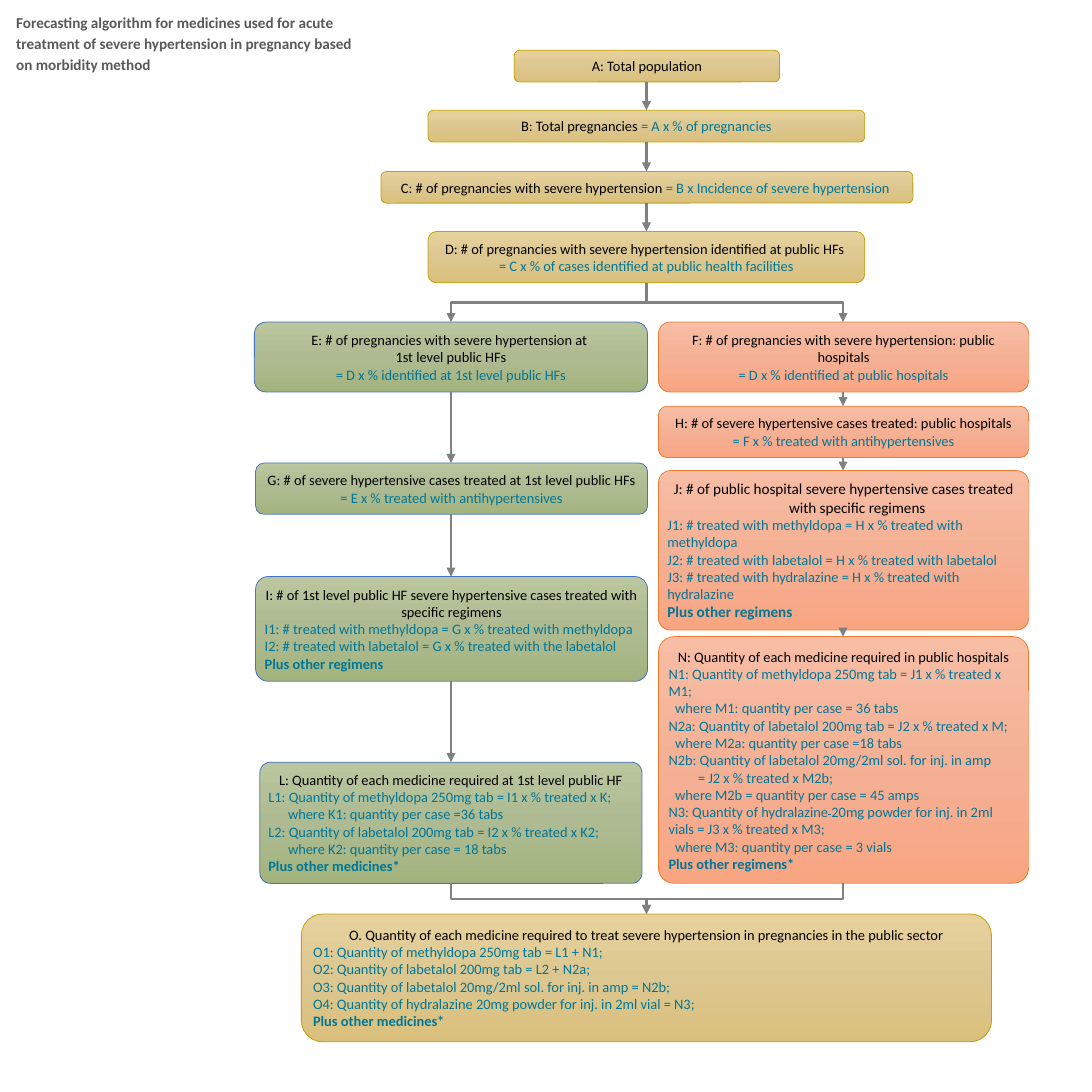
"""Build the forecasting flowchart for severe hypertension medicines."""
import copy

import pptx
import pptx.dml.color
import pptx.enum.shapes
import pptx.enum.text
import pptx.oxml.ns
import pptx.oxml.xmlchemy
import pptx.util
from lxml import etree
from pptx.util import Inches

ALIGN = pptx.enum.text.PP_ALIGN
BLACK, TEAL, GREY, TITLE_GREY = "000000", "007698", "808080", "595959"

BRANCHES = {
    "total": {"stops": ("E7D19D", "DDC790", "DAC07C"), "outline": "C2A204", "axis": 5.92},
    "first_level": {"stops": ("BAC69E", "AEBB92", "A3B37D"), "outline": "4472C4", "axis": 4.13},
    "hospital": {"stops": ("F7BDA5", "F5B196", "F8A582"), "outline": "ED7D31", "axis": 7.72},
}

FLOW = ("AB", "BC", "CD", "DE", "DF", "EG", "GI", "IL",
        "FH", "HJ", "JN", "LO", "NO")


def run(text, color=TEAL, size=9.5, bold=False, strike=False):
    """Describe one run of text."""
    return {"text": text, "color": color, "size": size, "bold": bold, "strike": strike}


def head(text, *more, size=9.5, hang=0):
    """Describe a centred step heading."""
    return {"runs": [run(text, BLACK, size), *more], "align": ALIGN.CENTER,
            "margin": hang, "first": -hang}


def formula(text):
    """Describe a centred formula."""
    return {"runs": [run(text)], "align": ALIGN.CENTER, "margin": 0, "first": 0}


def item(*parts, indent=0.0):
    """Describe a left-aligned quantity line."""
    runs = [run(part) if isinstance(part, str) else part for part in parts]
    return {"runs": runs, "align": ALIGN.LEFT, "margin": indent, "first": 0}


def plus(what, size=9.5):
    """Describe the bold closing line of a step."""
    return item(run(f"Plus other {what}", size=size, bold=True))


STEPS = {
    "A": ("total", (4.71, 0.46, 2.43, 0.29), 0.167, [head("A: Total population")]),
    "B": ("total", (3.92, 1.01, 4, 0.29), 0.167, [
        head("B: Total pregnancies ", run("= A x % of pregnancies"))]),
    "C": ("total", (3.49, 1.57, 4.87, 0.29), 0.167, [
        head("C: # of pregnancies with severe hypertension ",
             run("= B x Incidence of severe hypertension "))]),
    "D": ("total", (3.92, 2.12, 4, 0.47), 0.167, [
        head("D: # of pregnancies with severe hypertension identified at public HFs "),
        formula("= C x % of cases identified at public health facilities")]),
    "E": ("first_level", (2.33, 2.95, 3.6, 0.64), 0.167, [
        head("E: # of pregnancies with severe hypertension at "),
        head("1st level public HFs"),
        formula("= D x % identified at 1st level public HFs")]),
    "F": ("hospital", (6.03, 2.95, 3.39, 0.64), 0.167, [
        head("F: # of pregnancies with severe hypertension: public hospitals"),
        formula("= D x % identified at public hospitals")]),
    "G": ("first_level", (2.34, 4.24, 3.59, 0.47), 0.167, [
        head("G: # of severe hypertensive cases treated at 1st level public HFs"),
        formula("= E x % treated with antihypertensives")]),
    "H": ("hospital", (6.03, 3.72, 3.39, 0.47), 0.167, [
        head("H: # of severe hypertensive cases treated: public hospitals"),
        formula("= F x % treated with antihypertensives")]),
    "I": ("first_level", (2.34, 5.28, 3.59, 0.96), 0.123, [
        head("I: # of 1st level public HF severe hypertensive cases treated with specific regimens"),
        item("I1: # treated with methyldopa = G x % treated with methyldopa"),
        item("I2: # treated with labetalol = G x % treated with the labetalol"),
        plus("regimens")]),
    "J": ("hospital", (6.03, 4.31, 3.39, 1.46), 0.076, [
        head("J: # of public hospital severe hypertensive cases treated with specific regimens",
             size=10, hang=0.25),
        item("J1: # treated with methyldopa = H x % treated with methyldopa"),
        item("J2: # treated with labetalol = H x % treated with labetalol"),
        item("J3: # treated with hydralazine = H x % treated with hydralazine"),
        plus("regimens", size=10)]),
    "L": ("first_level", (2.38, 6.98, 3.5, 1.11), 0.087, [
        head("L: Quantity of each medicine required at 1st level public HF"),
        item("L1: Quantity of methyldopa 250mg tab = I1 x % treated x K;"),
        item("where K1: quantity per case =36 tabs", indent=0.18),
        item("L2: Quantity of labetalol 200mg tab = I2 x % treated x K2;"),
        item("where K2: quantity per case = 18 tabs", indent=0.18),
        plus("medicines*")]),
    "N": ("hospital", (6.03, 5.83, 3.39, 2.26), 0.064, [
        head("N: Quantity of each medicine required in public hospitals"),
        item("N1: Quantity of methyldopa 250mg tab = J1 x % treated x M1;"),
        item("where M1: quantity per case = 36 tabs", indent=0.06),
        item("N2a: Quantity of labetalol 200mg tab = J2 x % treated x M;"),
        item("where M2a: quantity per case =18 tabs", indent=0.06),
        item("N2b: Quantity of labetalol 20mg/2ml sol. for inj. in amp"),
        item("= J2 x % treated x M2b;", indent=0.27),
        item("where M2b = quantity per case = 45 amps", indent=0.06),
        item("N3: Quantity of hydralazine", run(" ", strike=True),
             "20mg powder for inj. in 2ml vials = J3 x % treated x M3;"),
        item("where M3: quantity per case = 3 vials", indent=0.06),
        plus("regimens*")]),
    "O": ("total", (2.76, 8.37, 6.32, 1.17), 0.167, [
        head("O. Quantity of each medicine required to treat severe hypertension"
             " in pregnancies in the public sector"),
        item("O1: Quantity of methyldopa 250mg tab = L1 + N1;"),
        item("O2: Quantity of labetalol 200mg tab = L2 + N2a;"),
        item("O3: Quantity of labetalol 20mg/2ml sol. for inj. in amp = N2b;"),
        item("O4: Quantity of hydralazine 20mg powder for inj. in 2ml vial = N3;"),
        plus("medicines*")]),
}


def rgb(value):
    """Turn a hex string into a colour."""
    return pptx.dml.color.RGBColor.from_string(value)


def apply(target, values):
    """Set each attribute named in values on target."""
    for attribute, value in values.items():
        setattr(target, attribute, value)


def write(frame, paragraphs):
    """Fill a text frame with the described paragraphs."""
    for index, content in enumerate(paragraphs):
        paragraph = frame.add_paragraph() if index else frame.paragraphs[0]
        paragraph.alignment = content["align"]
        properties = paragraph._p.get_or_add_pPr()
        properties.set("marL", str(Inches(content["margin"])))
        properties.set("indent", str(Inches(content["first"])))
        for part in content["runs"]:
            piece = paragraph.add_run()
            piece.text = part["text"]
            apply(piece.font, {"name": "Calibri", "size": pptx.util.Pt(part["size"]),
                               "bold": part["bold"]})
            piece.font.color.rgb = rgb(part["color"])
            if part["strike"]:
                piece.font._element.set("strike", "sngStrike")


def shade(fill, colors):
    """Give a fill a downward gradient of three evenly spaced colours."""
    fill.gradient()
    fill.gradient_angle = 270
    first = fill.gradient_stops[0]._gs
    first.addnext(copy.deepcopy(first))
    for index, (stop, color) in enumerate(zip(fill.gradient_stops, colors)):
        stop.position = index / 2
        stop.color.rgb = rgb(color)


def add_step(slide, branch, place, radius, paragraphs):
    """Add one rounded step of the algorithm."""
    step = slide.shapes.add_shape(pptx.enum.shapes.MSO_SHAPE.ROUNDED_RECTANGLE,
                                  *map(Inches, place))
    step.shadow.inherit = False
    step.adjustments[0] = radius
    shade(step.fill, BRANCHES[branch]["stops"])
    step.line.color.rgb = rgb(BRANCHES[branch]["outline"])
    step.line.width = pptx.util.Pt(0.5)
    margins = dict.fromkeys(("margin_left", "margin_top", "margin_right", "margin_bottom"),
                            Inches(0.05))
    apply(step.text_frame, {
        **margins, "word_wrap": True,
        "vertical_anchor": pptx.enum.text.MSO_ANCHOR.MIDDLE,
        "auto_size": pptx.enum.text.MSO_AUTO_SIZE.SHAPE_TO_FIT_TEXT})
    write(step.text_frame, paragraphs)


def add_arrow(slide, source, target):
    """Link two steps downward, bending where their branches differ."""
    kinds = pptx.enum.shapes.MSO_CONNECTOR
    (x1, x2) = (BRANCHES[STEPS[key][0]]["axis"] for key in (source, target))
    _, top, _, height = STEPS[source][1]
    y1, y2 = top + height, STEPS[target][1][1]
    if x1 == x2:
        arrow = slide.shapes.add_connector(kinds.STRAIGHT, *map(Inches, (x1, y1, x2, y2)))
    else:
        mid_x, mid_y = (x1 + x2) / 2, (y1 + y2) / 2
        half_drop, half_span = (y2 - y1) / 2, abs(x2 - x1) / 2
        side = 1 if x2 < x1 else -1
        arrow = slide.shapes.add_connector(kinds.ELBOW, *map(Inches, (
            mid_x - side * half_drop, mid_y - half_span,
            mid_x + side * half_drop, mid_y + half_span)))
        arrow._element.spPr.xfrm.set("rot", str((90 if side > 0 else 270) * 60000))
    arrow.line.color.rgb = rgb(GREY)
    arrow.line.width = pptx.util.Pt(1.5)
    qn = pptx.oxml.ns.qn
    etree.SubElement(arrow.line._get_or_add_ln(), qn("a:tailEnd"), type="triangle")
    etree.SubElement(arrow._element.spPr, qn("a:effectLst"))


def add_title(slide):
    """Add the bold title in the top left corner."""
    title = slide.shapes.add_textbox(*map(Inches, (0.05, 0.05, 3.28, 0.67)))
    title.text_frame.word_wrap = True
    title.text_frame.auto_size = pptx.enum.text.MSO_AUTO_SIZE.SHAPE_TO_FIT_TEXT
    wording = ("Forecasting algorithm for medicines used for acute treatment of "
               "severe hypertension in pregnancy based on morbidity method")
    write(title.text_frame, [item(run(wording, TITLE_GREY, 10, True))])
    apply(title.text_frame.paragraphs[0], {
        "line_spacing": 1.15, "space_before": pptx.util.Pt(6), "space_after": pptx.util.Pt(18)})


def main():
    """Build and save the slide."""
    deck = pptx.Presentation()
    apply(deck, {"slide_width": Inches(10), "slide_height": Inches(10)})
    slide = deck.slides.add_slide(deck.slide_layouts[6])
    for step in STEPS.values():
        add_step(slide, *step)
    for source, target in FLOW:
        add_arrow(slide, source, target)
    add_title(slide)
    deck.save("out.pptx")


if __name__ == "__main__":
    main()
